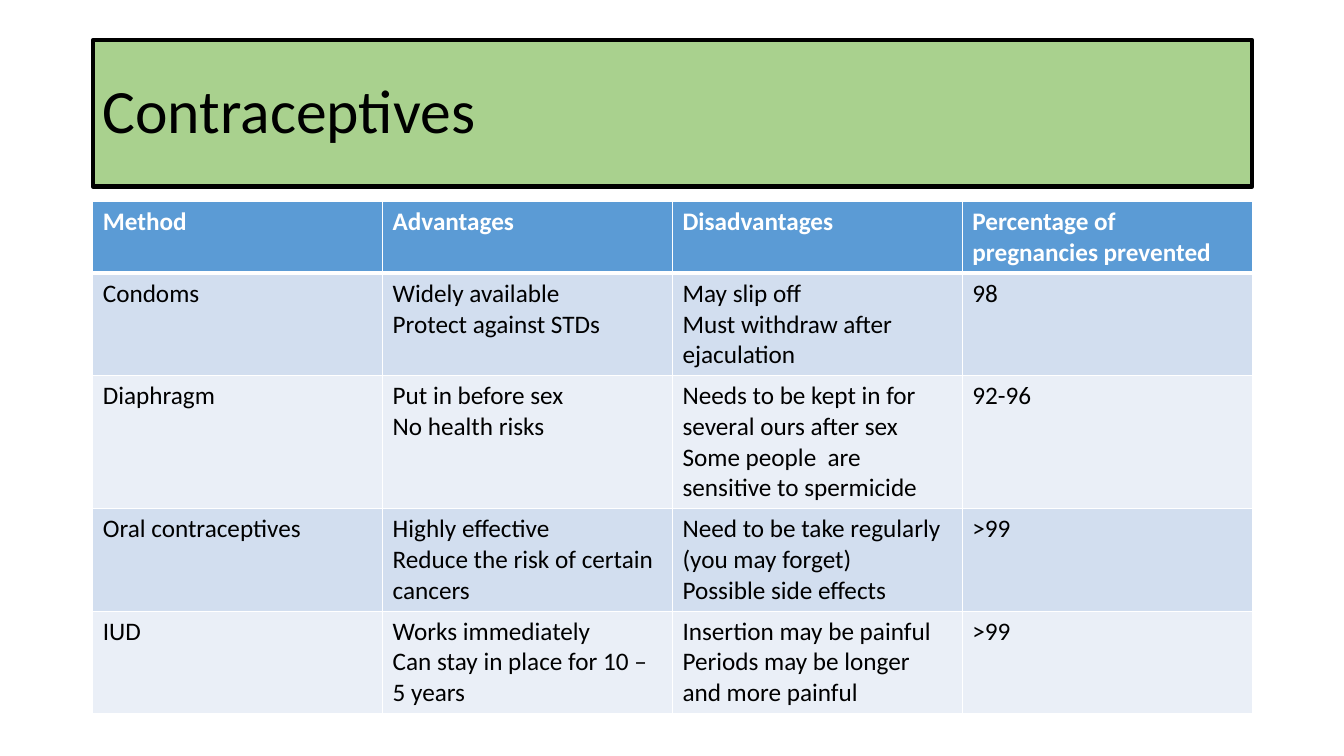
from lxml import etree
from pptx import Presentation
from pptx.dml.color import RGBColor
from pptx.enum.shapes import MSO_SHAPE
from pptx.enum.text import MSO_ANCHOR, PP_ALIGN
from pptx.oxml.ns import qn
from pptx.util import Inches, Pt

RECT = MSO_SHAPE.RECTANGLE
MIDDLE = MSO_ANCHOR.MIDDLE
LEFT = PP_ALIGN.LEFT

COLORS = {
    "title": "A9D18E",
    "header": "5B9BD5",
    "odd": "D2DEEF",
    "even": "EAEFF7",
    "black": "000000",
    "white": "FFFFFF",
}


def rgb(name):
    return RGBColor.from_string(COLORS[name])


def write(tf, text, size=18, color="black", bold=False, spacing=1.0):
    tf.word_wrap = True
    for i, line in enumerate(text.split("\n")):
        p = tf.paragraphs[0] if i == 0 else tf.add_paragraph()
        p.alignment = LEFT
        p.line_spacing = spacing
        r = p.add_run()
        r.text = line
        r.font.name = "Calibri"
        r.font.size = Pt(size)
        r.font.bold = bold
        r.font.color.rgb = rgb(color)


prs = Presentation()
prs.slide_width = Inches(13.33)
prs.slide_height = Inches(7.5)
s = prs.slides.add_slide(prs.slide_layouts[6])

title = s.shapes.add_shape(RECT, Inches(0.92), Inches(0.4), Inches(11.5), Inches(1.45))
title.shadow.inherit = False
title.fill.solid()
title.fill.fore_color.rgb = rgb("title")
title.line.color.rgb = rgb("black")
title.line.width = Pt(3)
title.text_frame.vertical_anchor = MIDDLE
write(title.text_frame, "Contraceptives", size=44, spacing=0.9)

rows = [
    ["Method", "Advantages", "Disadvantages", "Percentage of pregnancies prevented"],
    ["Condoms", "Widely available\nProtect against STDs",
     "May slip off\nMust withdraw after ejaculation", "98"],
    ["Diaphragm", "Put in before sex\nNo health risks",
     "Needs to be kept in for several ours after sex\n"
     "Some people  are sensitive to spermicide", "92-96"],
    ["Oral contraceptives", "Highly effective\nReduce the risk of certain cancers",
     "Need to be take regularly (you may forget)\nPossible side effects", ">99"],
    ["IUD", "Works immediately\nCan stay in place for 10 – 5 years",
     "Insertion may be painful\nPeriods may be longer and more painful", ">99"],
]

frame = s.shapes.add_table(len(rows), len(rows[0]), Inches(0.92), Inches(2), Inches(11.5), Inches(5))
table = frame.table
for i, row in enumerate(rows):
    table.rows[i].height = Inches(0.41)
    header = i == 0
    fill = "header" if header else "odd" if i % 2 else "even"
    widths = {"lnL": 1, "lnR": 1, "lnT": 3 if i == 1 else 1, "lnB": 3 if header else 1}
    for j, text in enumerate(row):
        cell = table.cell(i, j)
        tcPr = cell._tc.get_or_add_tcPr()
        for side, width in widths.items():
            ln = etree.SubElement(tcPr, qn("a:" + side), w=str(Pt(width)))
            solid = etree.SubElement(ln, qn("a:solidFill"))
            etree.SubElement(solid, qn("a:srgbClr"), val=COLORS["white"])
        cell.fill.solid()
        cell.fill.fore_color.rgb = rgb(fill)
        write(cell.text_frame, text, color="white" if header else "black", bold=header)
frame.height = Inches(5)

prs.save("out.pptx")
